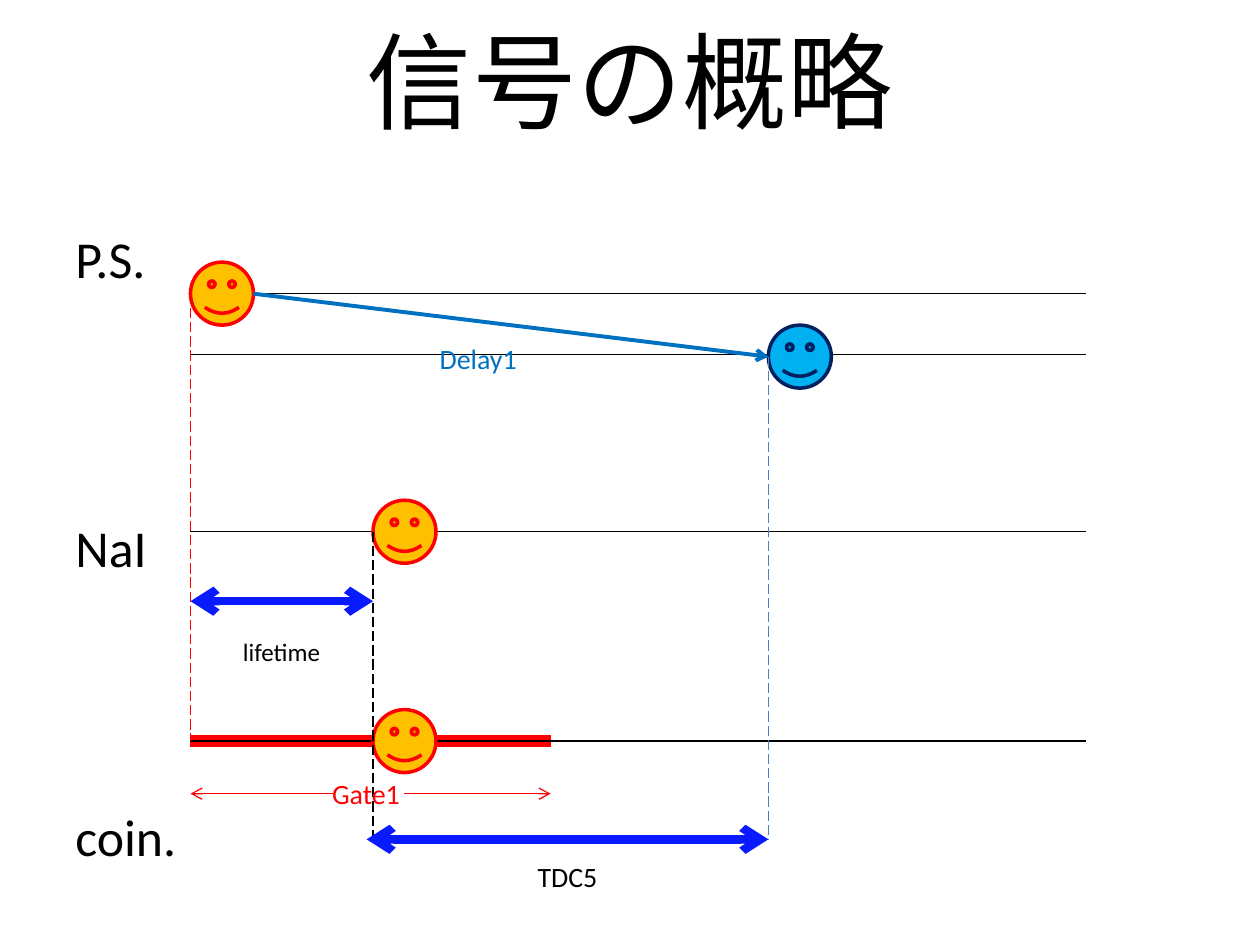
"""Build the signal timing overview slide."""
from dataclasses import dataclass

from lxml.etree import SubElement
from pptx import Presentation
from pptx.dml.color import RGBColor
from pptx.enum.dml import MSO_LINE
from pptx.enum.shapes import MSO_CONNECTOR, MSO_SHAPE
from pptx.enum.text import MSO_ANCHOR as Anchor, PP_ALIGN as Align
from pptx.oxml.ns import qn
from pptx.util import Cm, Pt


@dataclass(frozen=True)
class Theme:
    """Colours, font and sizes of the slide."""
    font: str = "Calibri"
    black: str = "000000"
    red: str = "FF0000"
    blue: str = "0070C0"
    navy: str = "002060"
    sky: str = "00B0F0"
    steel: str = "4B7EBC"
    span: str = "0A1AFF"
    orange: str = "FFC000"
    title: float = 60
    lane: float = 29.6
    label: float = 16
    small: float = 14.3
    thin: float = 0.75
    outline: float = 2
    delay: float = 2.25
    wide: float = 4.75
    gate: float = 7.25


T = Theme()
START, HIT, DELAYED, GATE_END, END = 3.84, 7.52, 15.49, 11.1, 21.89
PS, PS_DELAYED, NAI, COIN = 5.92, 7.14, 10.72, 14.94
DELAYED_FACE, LIFETIME, GATE, TDC = 7.19, 12.12, 16, 16.92
FACE = 1.27


def add_text(s, text, x, y, w, h, *, size=T.label, color=T.black,
             align=Align.CENTER, anchor=Anchor.MIDDLE, gap=0):
    """Add a text box with one paragraph per line of text."""
    tf = s.shapes.add_textbox(Cm(x), Cm(y), Cm(w), Cm(h)).text_frame
    tf.word_wrap = True
    tf.vertical_anchor = anchor
    for i, line in enumerate(text.split("\n")):
        p = tf.paragraphs[0] if i == 0 else tf.add_paragraph()
        p.alignment = align
        p.space_before = Pt(gap if i else 0)
        r = p.add_run()
        r.text = line
        r.font.name, r.font.size = T.font, Pt(size)
        r.font.color.rgb = RGBColor.from_string(color)


def add_line(s, x1, y1, x2, y2, color=T.black, width=T.thin,
             dashed=False, ends=()):
    """Add a straight line with optional dashes and arrowheads."""
    line = s.shapes.add_connector(MSO_CONNECTOR.STRAIGHT,
                                  Cm(x1), Cm(y1), Cm(x2), Cm(y2))
    line.line.color.rgb = RGBColor.from_string(color)
    line.line.width = Pt(width)
    if dashed:
        line.line.dash_style = MSO_LINE.LONG_DASH
    ln = line.line._get_or_add_ln()
    for end in ends:
        SubElement(ln, qn(f"a:{end}"), type="arrow")
    SubElement(line._element.spPr, qn("a:effectLst"))


def add_face(s, x, y, fill=T.orange, color=T.red):
    """Add a signal face whose left edge is at x and centre at y."""
    sp = s.shapes.add_shape(MSO_SHAPE.SMILEY_FACE, Cm(x), Cm(y - FACE / 2),
                            Cm(FACE), Cm(FACE))
    sp.shadow.inherit = False
    sp.fill.solid()
    sp.fill.fore_color.rgb = RGBColor.from_string(fill)
    sp.line.color.rgb = RGBColor.from_string(color)
    sp.line.width = Pt(T.outline)


def main():
    """Build and save the slide."""
    prs = Presentation()
    prs.slide_width, prs.slide_height = Cm(25.4), Cm(19.05)
    s = prs.slides.add_slide(prs.slide_layouts[6])

    add_line(s, START, COIN, GATE_END, COIN, T.red, T.gate)
    add_text(s, "信号の概略", 1.55, 0, 22.28, 3.2, size=T.title)
    add_text(s, "P.S.\nNaI\ncoin.", 1.27, 4.45, 22.86, 12.57, size=T.lane,
             align=Align.LEFT, anchor=Anchor.TOP, gap=129.6)
    for y in (PS, NAI, COIN, PS_DELAYED):
        add_line(s, START, y, END, y)

    add_line(s, START, PS, START, COIN, T.red, dashed=True)
    for x, y in ((START, PS), (HIT, NAI), (HIT, COIN)):
        add_face(s, x, y)
    add_line(s, HIT, NAI, HIT, TDC, dashed=True)
    add_face(s, DELAYED, DELAYED_FACE, T.sky, T.navy)

    add_text(s, "lifetime", 3.53, 12.73, 4.29, 0.79, size=T.small)
    add_text(s, "Delay1", 8.41, 6.55, 2.46, 1.35, color=T.blue)
    add_text(s, "TDC5", 10.21, 16.99, 2.46, 1.35)
    add_text(s, "Gate1", 4.47, 15.32, 5.82, 1.35, color=T.red)

    add_line(s, START + FACE, PS, DELAYED, DELAYED_FACE, T.blue, T.delay,
             ends=("tailEnd",))
    for x1, x2 in ((8.15, GATE_END), (6.71, START)):
        add_line(s, x1, GATE, x2, GATE, T.red, ends=("tailEnd",))
    for x1, x2, y in ((START, HIT, LIFETIME), (7.39, DELAYED, TDC)):
        add_line(s, x1, y, x2, y, T.span, T.wide,
                 ends=("headEnd", "tailEnd"))
    add_line(s, DELAYED, DELAYED_FACE, DELAYED, TDC, T.steel, dashed=True)

    prs.save("out.pptx")


if __name__ == "__main__":
    main()
